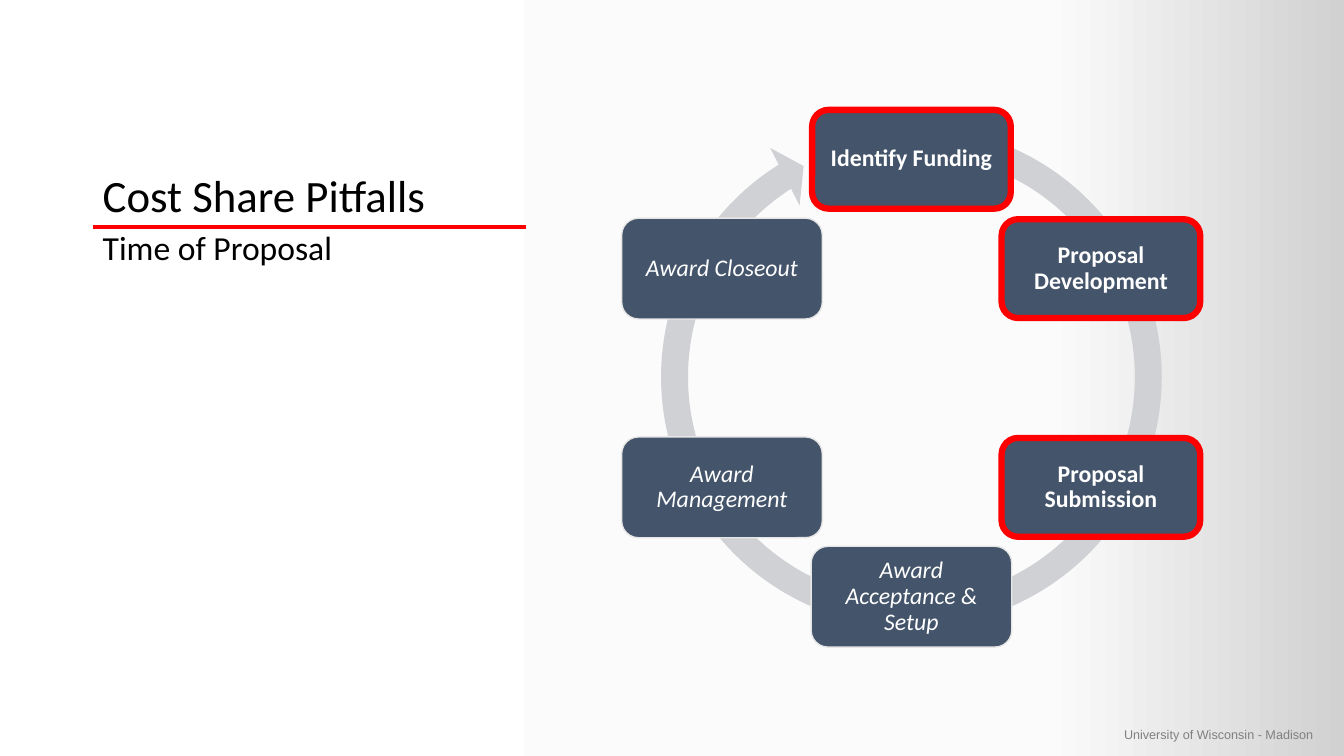
from copy import deepcopy
from math import cos, radians, sin

from lxml import etree
from pptx import Presentation
from pptx.dml.color import RGBColor
from pptx.enum.shapes import MSO_CONNECTOR, MSO_SHAPE
from pptx.enum.text import MSO_ANCHOR, PP_ALIGN
from pptx.oxml.ns import qn
from pptx.util import Inches, Pt

# Content
TITLE = "Cost Share Pitfalls"
SUBTITLE = "Time of Proposal"
FOOTER = "University of Wisconsin - Madison"
STAGES = [  # clockwise from the top: label, highlighted
    ("Identify Funding", True),
    ("Proposal Development", True),
    ("Proposal Submission", True),
    ("Award Acceptance & Setup", False),
    ("Award Management", False),
    ("Award Closeout", False),
]

# Style
WHITE = RGBColor(0xFF, 0xFF, 0xFF)
BLACK = RGBColor(0, 0, 0)
RED = RGBColor(0xFF, 0, 0)
NAVY = RGBColor(0x44, 0x54, 0x6A)
RING_GREY = RGBColor(0xCF, 0xD1, 0xD4)
EDGE_GREY = RGBColor(0xE7, 0xE6, 0xE6)
FOOTER_GREY = RGBColor(0x80, 0x80, 0x80)
BACKDROP = [(0, WHITE), (0.78, RGBColor(0xFB, 0xFB, 0xFB)), (1, RGBColor(0xD1, 0xD1, 0xD1))]
ROUNDED, RING = MSO_SHAPE.ROUNDED_RECTANGLE, MSO_SHAPE.CIRCULAR_ARROW
TOP, MIDDLE, BOTTOM = MSO_ANCHOR.TOP, MSO_ANCHOR.MIDDLE, MSO_ANCHOR.BOTTOM
CENTER = PP_ALIGN.CENTER

# Layout, in inches
WIDTH, HEIGHT = 13.33, 7.5
LEFT, COLUMN, RULE_Y = 0.92, 4.3, 0.3 * HEIGHT
CENTER_X, CENTER_Y, RADIUS = 9.04, HEIGHT / 2, 2.17
STAGE_W, STAGE_H = 1.99, 1
FRAME_W, FRAME_H = 1.97, 0.98
RING_SIZE = 5.34
RING_SHAPE = (0.05, 3.13, 142.63, 171.07, 0.06)

deck = Presentation()
deck.slide_width, deck.slide_height = Inches(WIDTH), Inches(HEIGHT)
page = deck.slides.add_slide(deck.slide_layouts[6])


def style_text(frame, text, size, color, font="Calibri", spacing=0.9):
    frame.text = text
    para = frame.paragraphs[0]
    para.line_spacing = spacing
    span = para.runs[0]
    span.font.name, span.font.size = font, Pt(size)
    span.font.color.rgb = color
    return para


def add_text(left, top, width, height, text, size, color, anchor=TOP, **style):
    box = page.shapes.add_textbox(*map(Inches, (left, top, width, height)))
    box.text_frame.word_wrap = True
    box.text_frame.vertical_anchor = anchor
    style_text(box.text_frame, text, size, color, **style)


def add_centered(kind, x, y, width, height, fill=None, line=None, weight=1):
    shape = page.shapes.add_shape(
        kind, *map(Inches, (x - width / 2, y - height / 2, width, height)))
    shape.shadow.inherit = False
    if fill is None:
        shape.fill.background()
    else:
        shape.fill.solid()
        shape.fill.fore_color.rgb = fill
    if line is None:
        shape.line.fill.background()
    else:
        shape.line.color.rgb = line
        shape.line.width = Pt(weight)
    return shape


# Background gradient, with a third stop
backdrop = page.background.fill
backdrop.gradient()
backdrop.gradient_angle = 0
stop_list = page.background._cSld.find(".//" + qn("a:gsLst"))
stop_list.append(deepcopy(stop_list[-1]))
for stop, (position, color) in zip(backdrop.gradient_stops, BACKDROP):
    stop.position = position
    stop.color.rgb = color

# Footer, rule, title and subtitle
add_text(11.05, 7.16, 2.2, 0.25, FOOTER, 9, FOOTER_GREY, font="Arial", spacing=1)
rule = page.shapes.add_connector(
    MSO_CONNECTOR.STRAIGHT, *map(Inches, (LEFT, RULE_Y, LEFT + COLUMN, RULE_Y)))
rule.line.color.rgb = RED
rule.line.width = Pt(3)
etree.SubElement(rule._element.spPr, qn("a:effectLst"))
add_text(LEFT, 0.5, COLUMN, RULE_Y - 0.5, TITLE, 32, BLACK, anchor=BOTTOM)
add_text(LEFT, RULE_Y, COLUMN, 4.17, SUBTITLE, 24, BLACK)

# Ring arrow behind the stages
ring = add_centered(RING, CENTER_X, CENTER_Y - 0.01, RING_SIZE, RING_SIZE, fill=RING_GREY)
for index, value in enumerate(RING_SHAPE):
    ring.adjustments[index] = value

# Stages evenly spaced around the ring
for index, (label, highlighted) in enumerate(STAGES):
    angle = radians(index * 360 / len(STAGES))
    x, y = CENTER_X + RADIUS * sin(angle), CENTER_Y - RADIUS * cos(angle)
    stage = add_centered(ROUNDED, x, y, STAGE_W, STAGE_H, NAVY, EDGE_GREY)
    frame = stage.text_frame
    frame.word_wrap = True
    frame.vertical_anchor = MIDDLE
    frame.margin_left = frame.margin_right = Inches(0.07)
    frame.margin_top = frame.margin_bottom = Inches(0.07)
    para = style_text(frame, label, 17, WHITE)
    para.alignment = CENTER
    para.runs[0].font.bold = highlighted
    para.runs[0].font.italic = not highlighted
    if highlighted:
        add_centered(ROUNDED, x, y, FRAME_W, FRAME_H, line=RED, weight=4.5)

deck.save("out.pptx")
